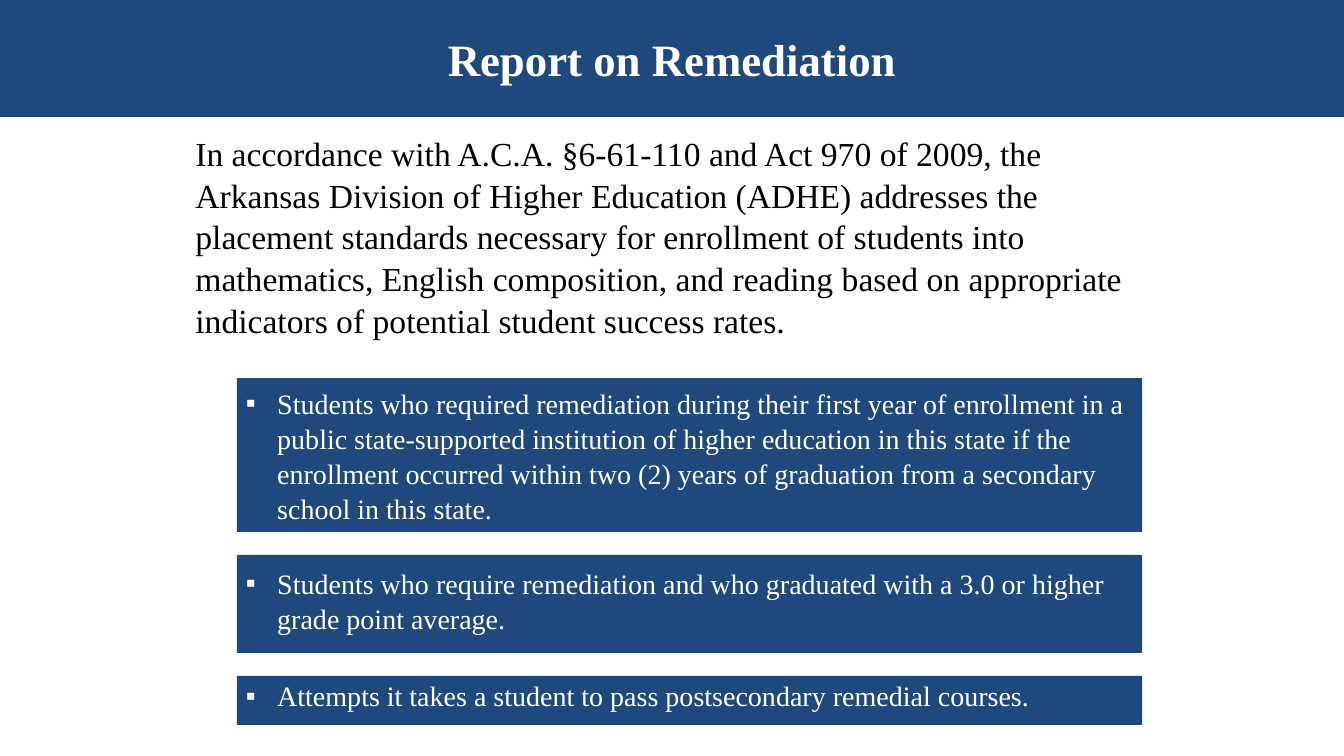
from dataclasses import dataclass

from lxml.etree import SubElement
from pptx import Presentation
from pptx.dml.color import RGBColor
from pptx.enum.shapes import MSO_SHAPE as Shape
from pptx.enum.text import MSO_ANCHOR as Anchor, PP_ALIGN as Align
from pptx.oxml.ns import qn
from pptx.util import Pt


@dataclass(frozen=True)
class Theme:
    navy: RGBColor = RGBColor(0x1F, 0x49, 0x7D)
    white: RGBColor = RGBColor(0xFF, 0xFF, 0xFF)
    black: RGBColor = RGBColor(0, 0, 0)
    font: str = "Times New Roman"
    title_size: int = 32
    intro_size: int = 24
    point_size: int = 20
    line_spacing: float = 1.04


THEME = Theme()
WIDTH, HEIGHT = 960, 540
POINT_GAP = 16.4
HANGING = 22.3

INTRO = (
    "In accordance with A.C.A. §6-61-110 and Act 970 of 2009, the Arkansas Division "
    "of Higher Education (ADHE) addresses the placement standards necessary for "
    "enrollment of students into mathematics, English composition, and reading based "
    "on appropriate indicators of potential student success rates."
)
POINTS = [
    (
        "Students who required remediation during their first year of enrollment in a "
        "public state-supported institution of higher education in this state if the "
        "enrollment occurred within two (2) years of graduation from a secondary "
        "school in this state.",
        110, 5,
    ),
    (
        "Students who require remediation and who graduated with a 3.0 or higher "
        "grade point average.",
        70, 7,
    ),
    ("Attempts it takes a student to pass postsecondary remedial courses.", 35, 1),
]


def add_panel(slide, left, top, width, height):
    panel = slide.shapes.add_shape(
        Shape.RECTANGLE, Pt(left), Pt(top), Pt(width), Pt(height)
    )
    panel.shadow.inherit = False
    panel.fill.solid()
    panel.fill.fore_color.rgb = THEME.navy
    panel.line.fill.background()
    return panel


def write(frame, text, size, color, align=Align.LEFT, anchor=Anchor.TOP):
    frame.word_wrap = True
    frame.vertical_anchor = anchor
    paragraph = frame.paragraphs[0]
    paragraph.text = text
    paragraph.alignment = align
    paragraph.font.name = THEME.font
    paragraph.font.size = Pt(size)
    paragraph.font.color.rgb = color
    return paragraph


def add_bullet(paragraph):
    properties = paragraph._p.get_or_add_pPr()
    properties.set("marL", str(Pt(HANGING)))
    properties.set("indent", str(-Pt(HANGING)))
    SubElement(properties, qn("a:buFont"), typeface="Arial")
    SubElement(properties, qn("a:buChar"), char="▪")


def title_band(slide, left, top, width, height):
    band = add_panel(slide, left, top, width, height)
    heading = write(
        band.text_frame, "Report on Remediation", THEME.title_size, THEME.white,
        Align.CENTER, Anchor.MIDDLE,
    )
    heading.font.bold = True


def introduction(slide, left, top, width, height):
    intro = slide.shapes.add_textbox(Pt(left), Pt(top), Pt(width), Pt(height))
    paragraph = write(intro.text_frame, INTRO, THEME.intro_size, THEME.black)
    paragraph.line_spacing = THEME.line_spacing


def reporting_points(slide, left, top, width):
    for text, height, inset in POINTS:
        frame = add_panel(slide, left, top, width, height).text_frame
        frame.margin_left, frame.margin_right = Pt(6.5), Pt(3)
        frame.margin_top, frame.margin_bottom = Pt(inset), Pt(0)
        point = write(frame, text, THEME.point_size, THEME.white)
        point.line_spacing = THEME.line_spacing
        add_bullet(point)
        top += height + POINT_GAP


def main():
    presentation = Presentation()
    presentation.slide_width, presentation.slide_height = Pt(WIDTH), Pt(HEIGHT)
    slide = presentation.slides.add_slide(presentation.slide_layouts[6])
    title_band(slide, 0, 0, WIDTH, 83.5)
    introduction(slide, 132.5, 90, 687.5, 155)
    reporting_points(slide, 169.2, 270, 646.6)
    presentation.save("out.pptx")


if __name__ == "__main__":
    main()
